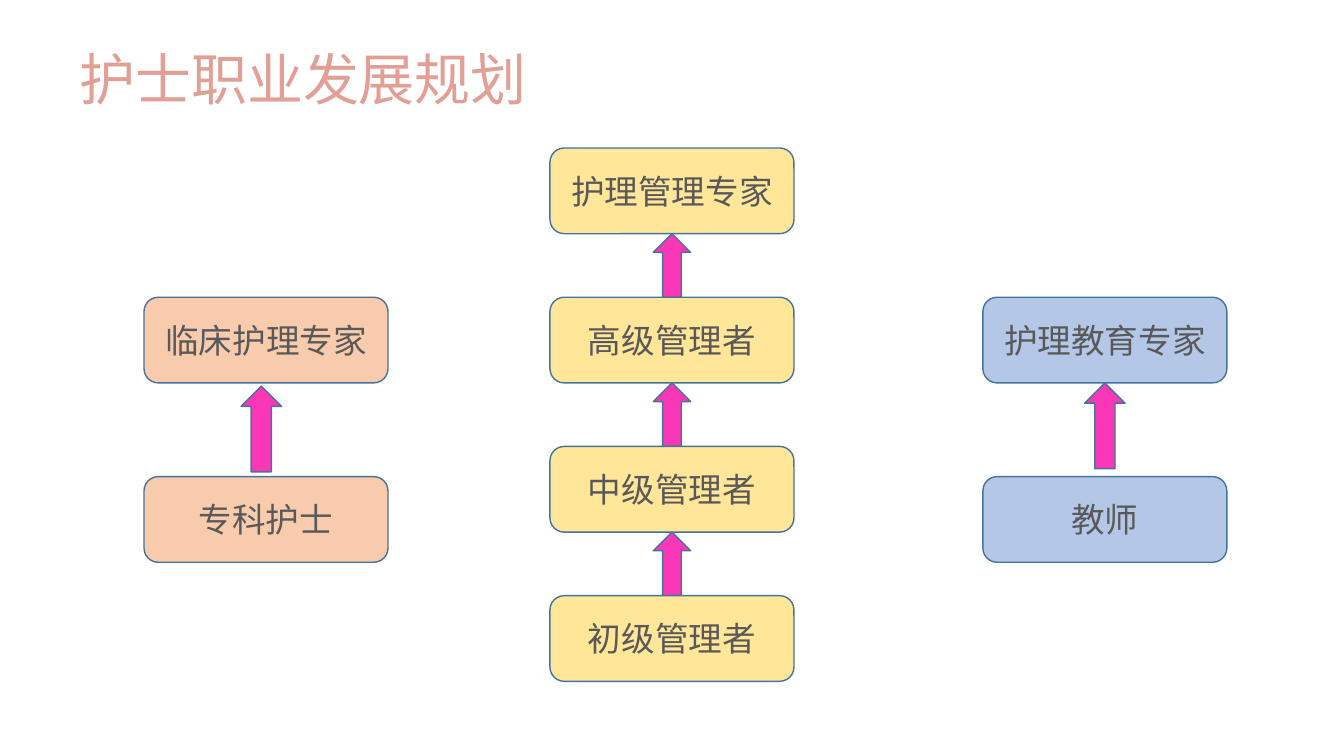
from dataclasses import dataclass

from lxml.etree import SubElement
from pptx import Presentation
from pptx.dml.color import RGBColor
from pptx.enum.lang import MSO_LANGUAGE_ID
from pptx.enum.shapes import MSO_SHAPE
from pptx.enum.text import MSO_ANCHOR, PP_ALIGN
from pptx.oxml.ns import qn
from pptx.util import Cm, Pt


@dataclass(frozen=True)
class Theme:
    """Colours, fonts and type sizes of the slide."""
    heading: str = "E19F95"
    label: str = "595959"
    outline: str = "43739E"
    arrow: str = "F937B7"
    clinical: str = "F8CBAD"
    management: str = "FFE699"
    teaching: str = "B4C7E7"
    heading_font: str = "Arial"
    label_font: str = "Noto Sans CJK SC"
    heading_size: int = 40
    label_size: int = 24


@dataclass(frozen=True)
class Ladder:
    """One career path, listed from the highest post down, in centimetres."""
    posts: tuple
    colour: str
    left: float
    top: float
    step: float
    arrow_size: tuple
    arrow_shift: tuple = (0, 0)


class CareerSlide:
    """Draws career ladders on one slide in one style."""

    POST_WIDTH, POST_HEIGHT = 6.15, 2.16

    def __init__(self, slide, theme):
        """Keep the slide and its style."""
        self.slide, self.theme = slide, theme

    def set_text(self, frame, text, font_name, size, colour):
        """Put one styled paragraph in a text frame and return it."""
        frame.word_wrap = True
        paragraph = frame.paragraphs[0]
        paragraph.text = text
        font = paragraph.font
        font.name, font.size = font_name, Pt(size)
        font.color.rgb = RGBColor.from_string(colour)
        font.language_id = MSO_LANGUAGE_ID.SIMPLIFIED_CHINESE
        east_asian = SubElement(paragraph._p.pPr.find(qn("a:defRPr")), qn("a:ea"))
        east_asian.set("typeface", self.theme.label_font)
        return paragraph

    def heading(self, text, left, top, width, height):
        """Add the slide heading."""
        box = self.slide.shapes.add_textbox(Cm(left), Cm(top), Cm(width), Cm(height))
        theme = self.theme
        paragraph = self.set_text(box.text_frame, text, theme.heading_font,
                                  theme.heading_size, theme.heading)
        paragraph.line_spacing = 0.9

    def block(self, kind, left, top, width, height, fill):
        """Add an outlined preset shape."""
        block = self.slide.shapes.add_shape(kind, Cm(left), Cm(top), Cm(width), Cm(height))
        block.shadow.inherit = False
        block.fill.solid()
        block.fill.fore_color.rgb = RGBColor.from_string(fill)
        block.line.color.rgb = RGBColor.from_string(self.theme.outline)
        block.line.width = Pt(1)
        return block

    def post(self, title, left, top, fill):
        """Add a rounded box that names one post."""
        box = self.block(MSO_SHAPE.ROUNDED_RECTANGLE, left, top,
                         self.POST_WIDTH, self.POST_HEIGHT, fill)
        box.text_frame.vertical_anchor = MSO_ANCHOR.MIDDLE
        theme = self.theme
        paragraph = self.set_text(box.text_frame, title, theme.label_font,
                                  theme.label_size, theme.label)
        paragraph.alignment = PP_ALIGN.CENTER

    def ladder(self, career_path):
        """Add the posts of one career with an arrow below all but the lowest."""
        width, height = career_path.arrow_size
        shift_x, shift_y = career_path.arrow_shift
        arrow_left = career_path.left + (self.POST_WIDTH - width) / 2 + shift_x
        for rank, title in enumerate(career_path.posts):
            top = career_path.top + rank * career_path.step
            self.post(title, career_path.left, top, career_path.colour)
            if rank < len(career_path.posts) - 1:
                self.block(MSO_SHAPE.UP_ARROW, arrow_left, top + self.POST_HEIGHT + shift_y,
                           width, height, self.theme.arrow)


def main():
    """Build and save the career planning slide."""
    presentation = Presentation()
    presentation.slide_width, presentation.slide_height = Cm(33.87), Cm(19.05)
    theme = Theme()
    career = CareerSlide(presentation.slides.add_slide(presentation.slide_layouts[6]), theme)
    career.heading("护士职业发展规划", 1.75, 1.19, 12.07, 3.91)
    for career_path in (
        Ladder(("临床护理专家", "专科护士"), theme.clinical,
               3.63, 7.49, 4.52, (1.02, 2.16), (-0.12, 0.08)),
        Ladder(("护理管理专家", "高级管理者", "中级管理者", "初级管理者"), theme.management,
               13.86, 3.73, 3.76, (0.94, 1.6)),
        Ladder(("护理教育专家", "教师"), theme.teaching,
               24.77, 7.49, 4.52, (1.02, 2.16)),
    ):
        career.ladder(career_path)
    presentation.save("out.pptx")


if __name__ == "__main__":
    main()
